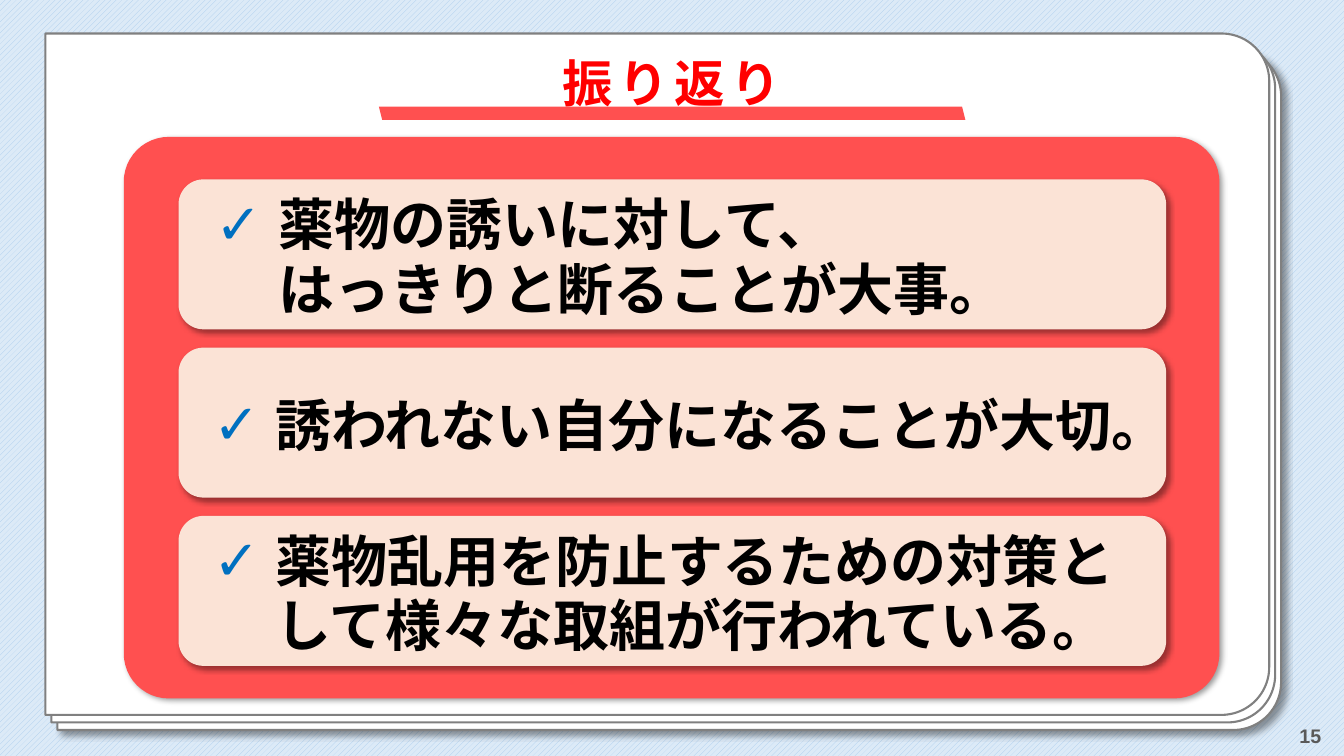
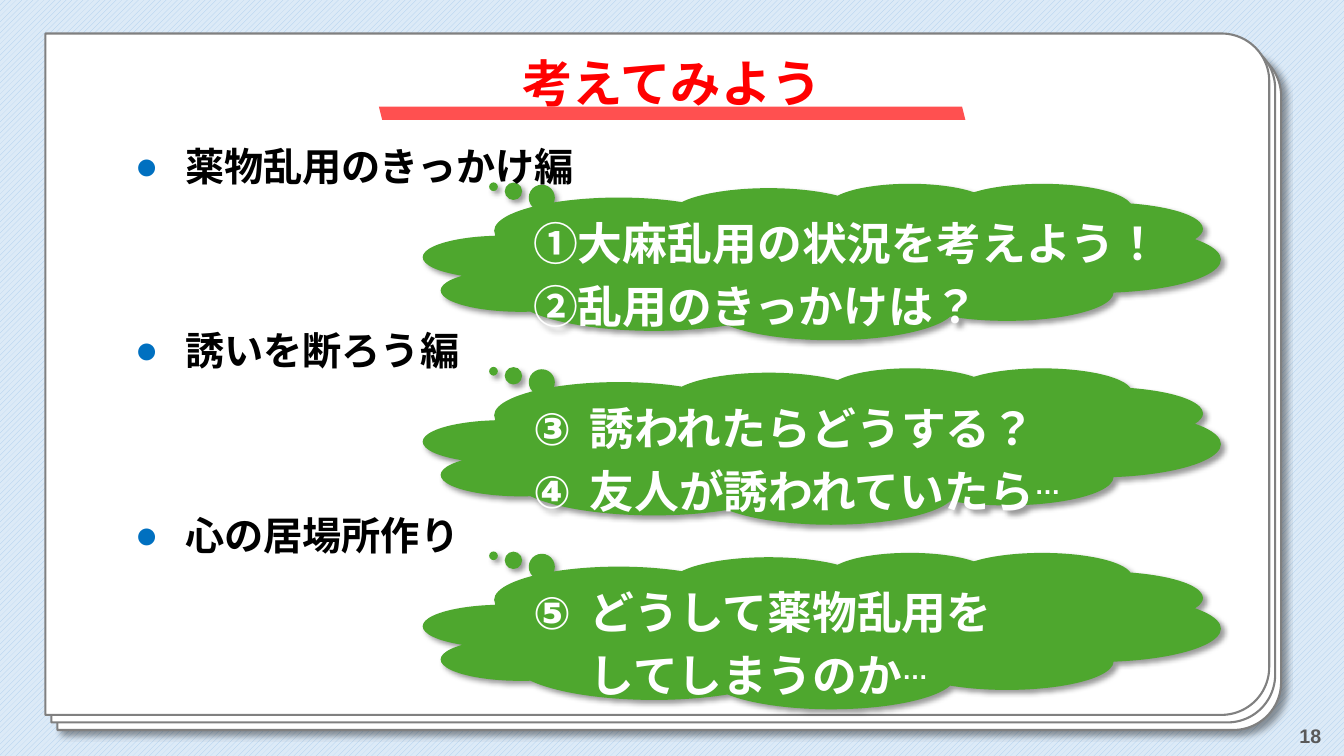
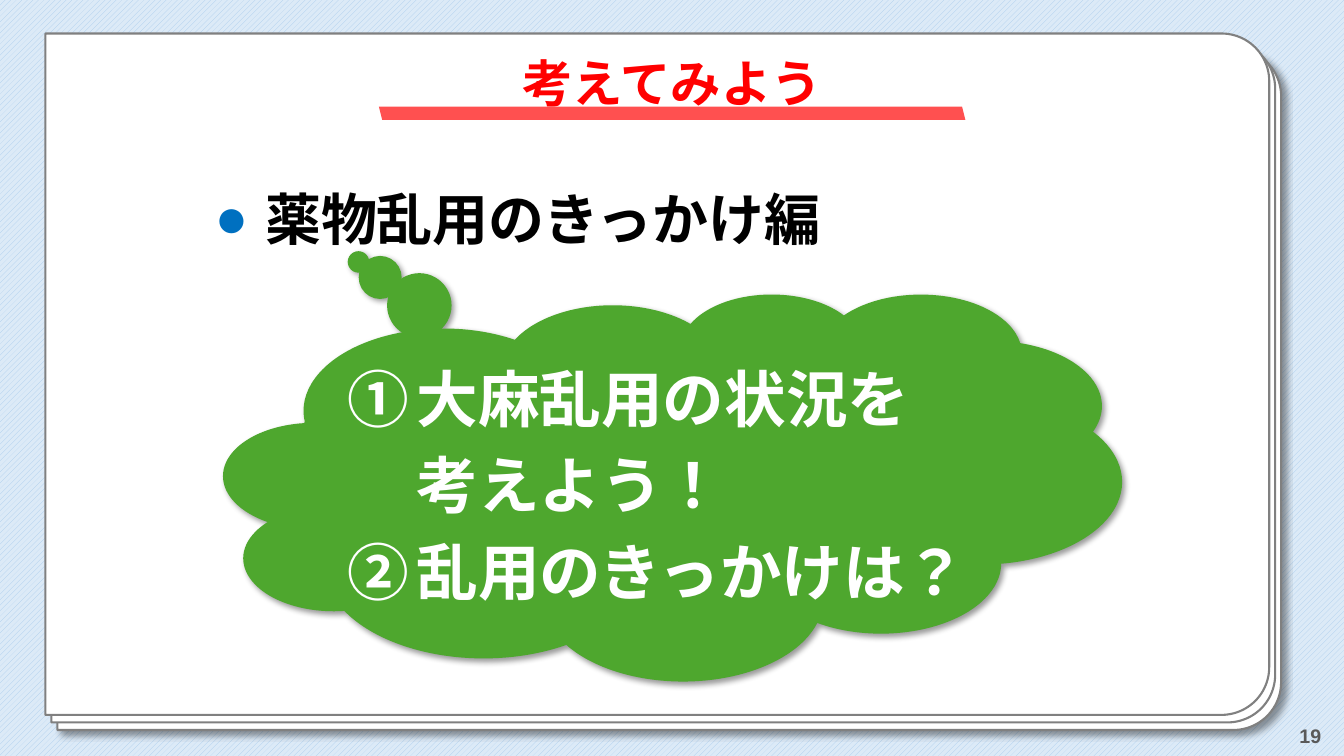
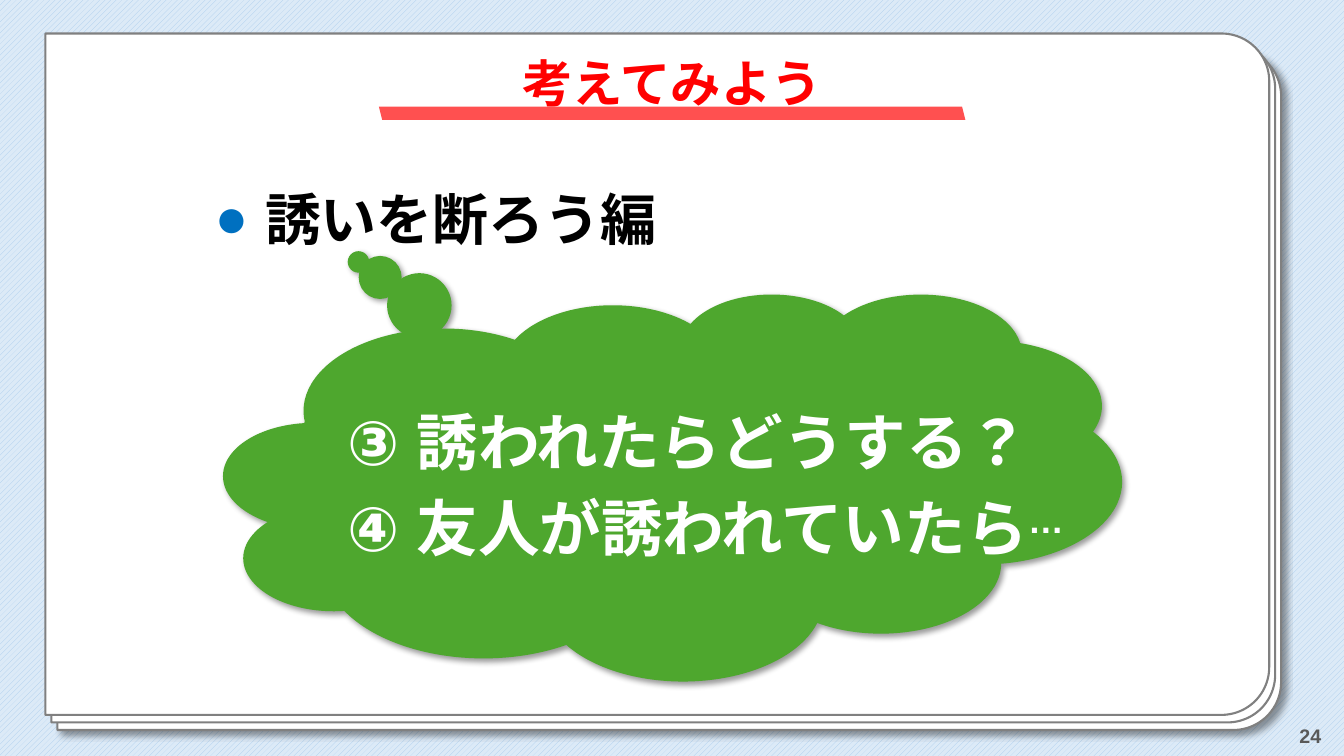
from dataclasses import dataclass

from lxml import etree
from pptx import Presentation
from pptx import util as u
from pptx.dml.color import RGBColor
from pptx.enum import dml, lang, shapes, text
from pptx.oxml.ns import qn

# ---- Content ----
REVIEW = [  # (text, left margin in cm)
    ("薬物の誘いに対して、\nはっきりと断ることが大事。", 2.08),
    ("誘われない自分になることが大切。", 2.01),
    ("薬物乱用を防止するための対策として様々な取組が行われている。", 2.01),
]
INVITED = ["誘われたらどうする？", "友人が誘われていたら…"]
OVERVIEW = [  # (heading, first automatic number, questions)
    ("薬物乱用のきっかけ編", None, ["①大麻乱用の状況を考えよう！", "②乱用のきっかけは？"]),
    ("誘いを断ろう編", 3, INVITED),
    ("心の居場所作り", 5, ["どうして薬物乱用を\nしてしまうのか…"]),
]
TOPICS = [  # (page number, heading, first automatic number, questions)
    ("19", "薬物乱用のきっかけ編", None, ["①\t大麻乱用の状況を\n考えよう！", "②\t乱用のきっかけは？"]),
    ("24", "誘いを断ろう編", 3, INVITED),
]


# ---- Theme ----
@dataclass(frozen=True)
class Theme:
    sky: str = "DCEAF7"
    stripe: str = "A6CAEC"
    white: str = "FFFFFF"
    edge: str = "808080"
    red: str = "FF0000"
    coral: str = "FF5050"
    peach: str = "FBE3D6"
    green: str = "4EA72E"
    blue: str = "0070C0"
    black: str = "000000"
    grey: str = "595959"
    font: str = "Arial"
    heading_font: str = "Noto Sans CJK JP"
    title: int = 36
    statement: int = 40
    number: int = 14
    small_heading: int = 28
    small_question: int = 32
    large_heading: int = 40
    large_question: int = 44
    tight: float = 0.96
    loose: float = 1.17


T = Theme()
KIND = shapes.MSO_SHAPE
MIDDLE = text.MSO_ANCHOR.MIDDLE


def rgb(code):
    return RGBColor.from_string(code)


def place(left, top, width, height):
    return [u.Cm(value) for value in (left, top, width, height)]


def add_xml(parent, tag, **attributes):
    return etree.SubElement(parent, qn(tag), {k: str(v) for k, v in attributes.items()})


# ---- Shapes ----
def add_box(page, kind, at, fill, adjust=(), line=None, shadow=None):
    box = page.shapes.add_shape(kind, *place(*at))
    for index, value in enumerate(adjust):
        box.adjustments[index] = value
    box.fill.solid()
    box.fill.fore_color.rgb = rgb(fill)
    if line:
        box.line.color.rgb = rgb(line)
        box.line.width = u.Pt(1.5)
    else:
        box.line.fill.background()
    box.shadow.inherit = False
    if shadow:
        effects = box.element.spPr.find(qn("a:effectLst"))
        outer = add_xml(effects, "a:outerShdw", blurRad=u.Pt(4), dist=u.Pt(shadow),
                        dir=45 * 60000, algn="tl", rotWithShape=0)
        color = add_xml(outer, "a:srgbClr", val=T.black)
        add_xml(color, "a:alpha", val=40000)
    return box


def set_frame(box, anchor, insets=None, wrap=True):
    frame = box.text_frame
    frame.word_wrap = wrap
    frame.auto_size = text.MSO_AUTO_SIZE.NONE
    frame.vertical_anchor = anchor
    if insets:
        (frame.margin_left, frame.margin_top,
         frame.margin_right, frame.margin_bottom) = [u.Cm(v) for v in insets]
    return frame


# ---- Text ----
def add_span(para, words, size, color, font=T.font, raised=False, spacing=None):
    span = para.add_run()
    span.text = words
    span.font.size = u.Pt(size)
    span.font.bold = True
    span.font.color.rgb = rgb(color)
    span.font.name = font
    span.font.language_id = lang.MSO_LANGUAGE_ID.JAPANESE
    props = span._r.get_or_add_rPr()
    add_xml(props, "a:ea", typeface=font)
    if raised:
        props.set("baseline", "30000")
    if spacing:
        props.set("spc", str(spacing * 100))


def add_words(para, words, size, color, font=T.font):
    for index, line in enumerate(words.split("\n")):
        if index:
            para.add_line_break()
        body, dots, _ = line.partition("…")
        add_span(para, body, size, color, font)
        if dots:
            add_span(para, dots, size, color, font, raised=True)


def set_list(para, margin, hang, bullet=None, start=None):
    para.alignment = text.PP_ALIGN.LEFT
    props = para._p.get_or_add_pPr()
    props.set("marL", str(u.Cm(margin)))
    props.set("indent", str(-u.Cm(hang)))
    if bullet:
        add_xml(add_xml(props, "a:buClr"), "a:srgbClr", val=T.blue)
        add_xml(props, "a:buFont", typeface=T.font)
        add_xml(props, "a:buChar", char=bullet)
    elif start:
        add_xml(props, "a:buFont", typeface="+mj-lt")
        add_xml(props, "a:buAutoNum", type="circleNumDbPlain", startAt=start)


# ---- Shared parts ----
def set_background(deck):
    fill = deck.slide_master.background.fill
    fill.patterned()
    fill.pattern = dml.MSO_PATTERN.WIDE_UPWARD_DIAGONAL
    fill.fore_color.rgb = rgb(T.stripe)
    fill.back_color.rgb = rgb(T.sky)


def add_sheets(deck, page):
    """Stack three paper sheets, then move them to the slide master."""
    tree = deck.slide_master.shapes.element
    for order, depth in enumerate((2, 1, 0)):
        sheet = add_box(page, KIND.ROUND_2_SAME_RECTANGLE,
                        (7.98 + 0.15 * depth, -5.99 + 0.19 * depth, 17.17, 30.84),
                        T.white, (0.07, 0), T.edge, 5 if depth == 2 else None)
        sheet.rotation = 90
        tree.insert(2 + order, sheet.element)


def add_page(deck, title, number, spacing=None):
    page = deck.slides.add_slide(deck.slide_layouts[5])
    head = page.shapes.title
    head.left, head.top, head.width, head.height = place(9.55, 0.84, 14.78, 2.16)
    para = set_frame(head, text.MSO_ANCHOR.BOTTOM).paragraphs[0]
    para.alignment = text.PP_ALIGN.CENTER
    para.line_spacing = T.tight
    add_span(para, title, T.title, T.red, spacing=spacing)

    bar = add_box(page, KIND.PARALLELOGRAM, (9.55, 2.69, 14.78, 0.33), T.coral)
    bar.element.spPr.find(qn("a:xfrm")).set("flipH", "1")

    corner = page.shapes.add_textbox(*place(25.93, 18.03, 7.62, 1.02))
    para = set_frame(corner, MIDDLE).paragraphs[0]
    para.alignment = text.PP_ALIGN.RIGHT
    add_span(para, number, T.number, T.grey)
    return page


def add_heading(page, words, left, top, height, size):
    box = page.shapes.add_textbox(*place(left, top, 1, height))
    box.width = u.Pt(size) * len(words) + u.Cm(1.88)
    para = set_frame(box, MIDDLE).paragraphs[0]
    set_list(para, 1.27, 1.27, bullet="●")
    add_words(para, words, size, T.black, T.heading_font)


def add_cloud(page, at, tail, questions, size, start, hang, anchor):
    cloud = add_box(page, KIND.CLOUD_CALLOUT, at, T.green, tail, shadow=3)
    frame = set_frame(cloud, anchor, (0, 0, 0, 0), wrap=False)
    for index, words in enumerate(questions):
        para = frame.add_paragraph() if index else frame.paragraphs[0]
        para.line_spacing = T.loose
        set_list(para, hang, hang, start=start)
        add_words(para, words, size, T.white)


# ---- Slides ----
def add_review(page):
    add_box(page, KIND.ROUNDED_RECTANGLE, (3.12, 3.45, 27.61, 14.15), T.coral, (0.08,), shadow=3)
    for row, (words, margin) in enumerate(REVIEW):
        card = add_box(page, KIND.ROUNDED_RECTANGLE, (4.5, 4.52 + 4.24 * row, 24.89, 3.78),
                       T.peach, shadow=3)
        para = set_frame(card, MIDDLE, (0.25, 0.51, 0.25, 0.3)).paragraphs[0]
        para.line_spacing = T.tight
        set_list(para, margin, 1.57, bullet="✓")
        add_words(para, words, T.statement, T.black)


def add_overview(page):
    for row, (heading, start, questions) in enumerate(OVERVIEW):
        top = 3.45 + 4.65 * row
        add_cloud(page, (10.67, top + 1.17, 20.09, 3.94), (-0.412, -0.478), questions,
                  T.small_question, start, 1.42 if start else 0, text.MSO_ANCHOR.TOP)
        add_heading(page, heading, 3.15, top, 1.45, T.small_heading)


def add_topic(page, heading, start, questions):
    add_cloud(page, (5.64, 7.39, 22.63, 9.75), (-0.35, -0.581), questions,
              T.large_question, start, 1.74, MIDDLE)
    add_heading(page, heading, 5.16, 4.52, 1.96, T.large_heading)


def main():
    deck = Presentation()
    deck.slide_width, deck.slide_height = u.Cm(33.87), u.Cm(19.05)
    set_background(deck)
    review = add_page(deck, "振り返り", "15", spacing=4)
    add_sheets(deck, review)
    add_review(review)
    add_overview(add_page(deck, "考えてみよう", "18"))
    for number, *topic in TOPICS:
        add_topic(add_page(deck, "考えてみよう", number), *topic)
    deck.save("out.pptx")


if __name__ == "__main__":
    main()
